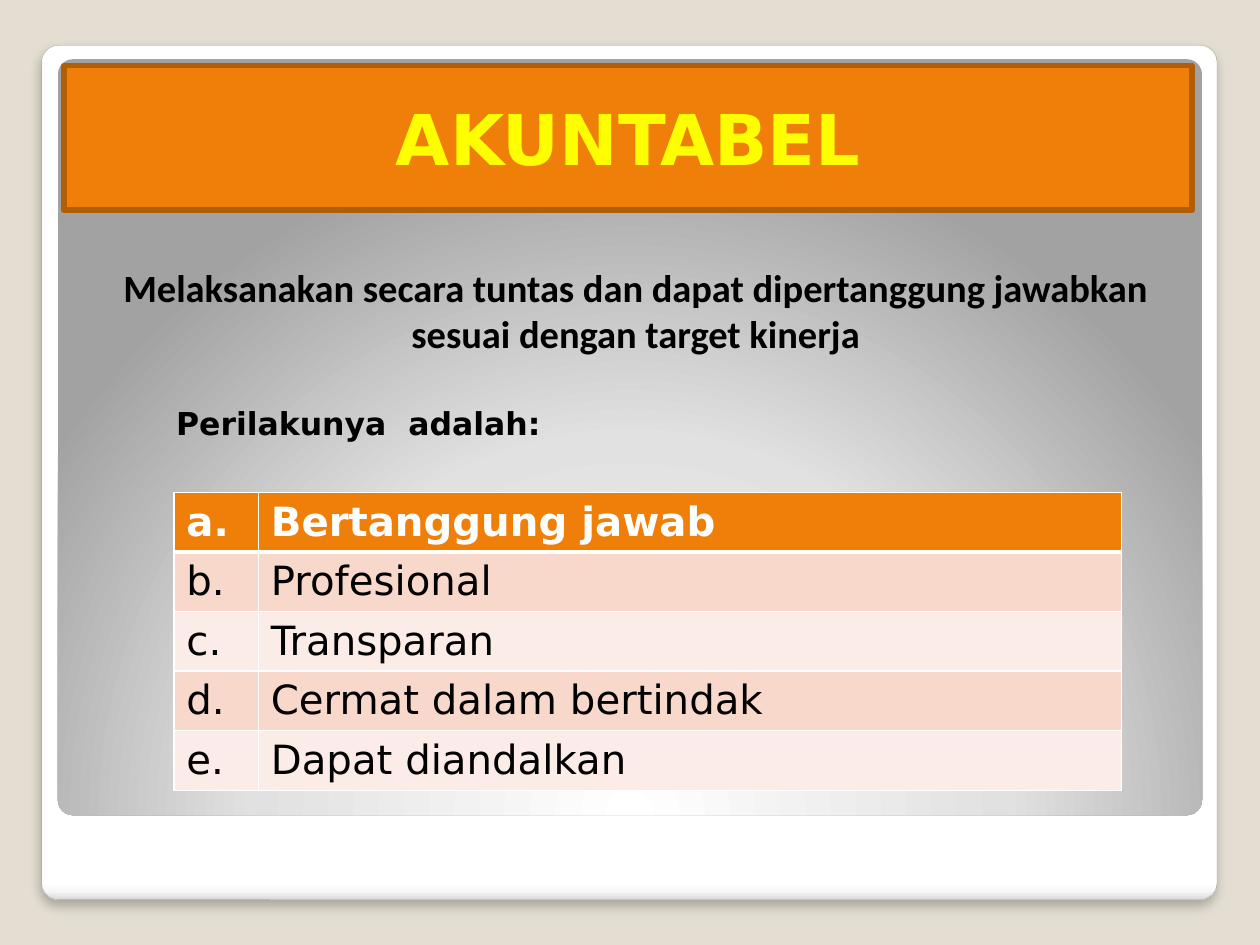
"""Build the AKUNTABEL slide: framed panel, banner, definition and behaviour table."""
import pptx
import pptx.dml.color
import pptx.enum.shapes
import pptx.enum.text
import pptx.oxml
import pptx.oxml.ns
import pptx.util

Inches, Pt = pptx.util.Inches, pptx.util.Pt
Shapes = pptx.enum.shapes.MSO_SHAPE
Align = pptx.enum.text.PP_ALIGN
Anchor = pptx.enum.text.MSO_ANCHOR

SANS = "DejaVu Sans"
ORANGE, WHITE, BLACK = "F07F09", "FFFFFF", "000000"
BANDS = ("FCECE7", "F9D8CC")

TITLE = "AKUNTABEL"
DEFINITION = ("Melaksanakan secara tuntas dan dapat dipertanggung jawabkan "
              "sesuai dengan target kinerja")
INTRO = "Perilakunya  adalah:"
BEHAVIOURS = ["Bertanggung jawab", "Profesional", "Transparan",
              "Cermat dalam bertindak", "Dapat diandalkan"]

TITLE_FONT = {"name": SANS, "size": Pt(40), "bold": True}
DEFINITION_FONT = {"name": "Calibri", "size": Pt(22), "bold": True}
INTRO_FONT = {"name": SANS, "size": Pt(18), "bold": True}
HEAD_FONT = {"name": SANS, "size": Pt(23), "bold": True}
ROW_FONT = {**HEAD_FONT, "bold": False}

FRAME_STOPS = [(0, WHITE), (98, WHITE), (99, "F7F7F7"), (100, "DADADA")]
PANEL_STOPS = [(0, WHITE), (55, "E1E1E1"), (100, "A2A2A2")]
DOWNWARD = '<a:lin ang="5400000" scaled="0"/>'
FROM_BELOW = ('<a:path path="circle"><a:fillToRect l="50000" t="175000" '
              'r="50000" b="-75000"/></a:path>')
SHADOW = (f'<a:outerShdw {{ns}} blurRad="{Pt(6)}" dist="{Pt(4)}" dir="5400000" '
          'algn="ctr" rotWithShape="0"><a:srgbClr val="000000">'
          '<a:alpha val="25000"/></a:srgbClr></a:outerShdw>')
NAMESPACE = pptx.oxml.ns.nsdecls("a")


def color(value):
    return pptx.dml.color.RGBColor.from_string(value)


def paint(target, value):
    target.fill.solid()
    target.fill.fore_color.rgb = color(value)


def write(frame, text, font, ink, align=Align.LEFT):
    para = frame.paragraphs[0]
    para.alignment = align
    span = para.add_run()
    span.text = text
    for name, value in font.items():
        setattr(span.font, name, value)
    span.font.color.rgb = color(ink)


def add_block(page, kind, place):
    block = page.shapes.add_shape(kind, *map(Inches, place))
    block.shadow.inherit = False
    return block


def add_rounded(page, place, stops, direction):
    block = add_block(page, Shapes.ROUNDED_RECTANGLE, place)
    block.adjustments[0] = 0.02
    marks = "".join(f'<a:gs pos="{at * 1000}"><a:srgbClr val="{value}"/></a:gs>'
                    for at, value in stops)
    gradient = pptx.oxml.parse_xml(
        f'<a:gradFill {NAMESPACE} rotWithShape="1"><a:gsLst>{marks}</a:gsLst>'
        f'{direction}</a:gradFill>')
    block.line.fill.background()
    block._element.spPr.find(pptx.oxml.ns.qn("a:prstGeom")).addnext(gradient)
    return block


def add_text(page, place, anchor, *words):
    box = page.shapes.add_textbox(*map(Inches, place))
    box.text_frame.word_wrap = True
    box.text_frame.vertical_anchor = anchor
    write(box.text_frame, *words)


def add_borders(cell, widths):
    properties = cell._tc.get_or_add_tcPr()
    for index, (side, width) in enumerate(widths.items()):
        properties.insert(index, pptx.oxml.parse_xml(
            f'<a:ln{side} {NAMESPACE} w="{Pt(width)}"><a:solidFill>'
            f'<a:srgbClr val="{WHITE}"/></a:solidFill></a:ln{side}>'))


def add_behaviours(page):
    table = page.shapes.add_table(len(BEHAVIOURS), 2, Inches(1.38), Inches(3.91),
                                  Inches(7.52), Inches(2.05)).table
    for column, width in zip(table.columns, (0.67, 6.85)):
        column.width = Inches(width)
    for row, behaviour in enumerate(BEHAVIOURS):
        table.rows[row].height = Inches(0.41)
        head = row == 0
        for column, text in enumerate((f"{'abcde'[row]}.", behaviour)):
            cell = table.cell(row, column)
            paint(cell, ORANGE if head else BANDS[row % 2])
            add_borders(cell, {"L": 1, "R": 1, "T": 3 if row == 1 else 1,
                               "B": 3 if head else 1})
            write(cell.text_frame, text, HEAD_FONT if head else ROW_FONT,
                  WHITE if head else BLACK)


def main():
    deck = pptx.Presentation()
    deck.slide_width, deck.slide_height = Inches(10), Inches(7.5)
    page = deck.slides.add_slide(deck.slide_layouts[6])
    paint(page.background, "E3DED1")

    frame = add_rounded(page, (0.33, 0.36, 9.33, 6.78), FRAME_STOPS, DOWNWARD)
    frame.line.color.rgb = color("A4A4A4")
    frame.line.width = Pt(0.16)
    effects = frame._element.spPr.find(pptx.oxml.ns.qn("a:effectLst"))
    effects.append(pptx.oxml.parse_xml(SHADOW.format(ns=NAMESPACE)))
    add_rounded(page, (0.46, 0.47, 9.08, 6), PANEL_STOPS, FROM_BELOW)

    add_behaviours(page)

    banner = add_block(page, Shapes.RECTANGLE, (0.51, 0.52, 8.95, 1.15))
    paint(banner, ORANGE)
    banner.line.color.rgb = color("B25E07")
    banner.line.width = Pt(3.35)
    banner.text_frame.vertical_anchor = Anchor.MIDDLE
    write(banner.text_frame, TITLE, TITLE_FONT, "FFFF00", Align.CENTER)

    add_text(page, (0.83, 1.73, 8.43, 1.15), Anchor.BOTTOM,
             DEFINITION, DEFINITION_FONT, BLACK, Align.CENTER)
    add_text(page, (1.3, 3.16, 3.16, 0.4), Anchor.TOP, INTRO, INTRO_FONT, BLACK)
    deck.save("out.pptx")


if __name__ == "__main__":
    main()
